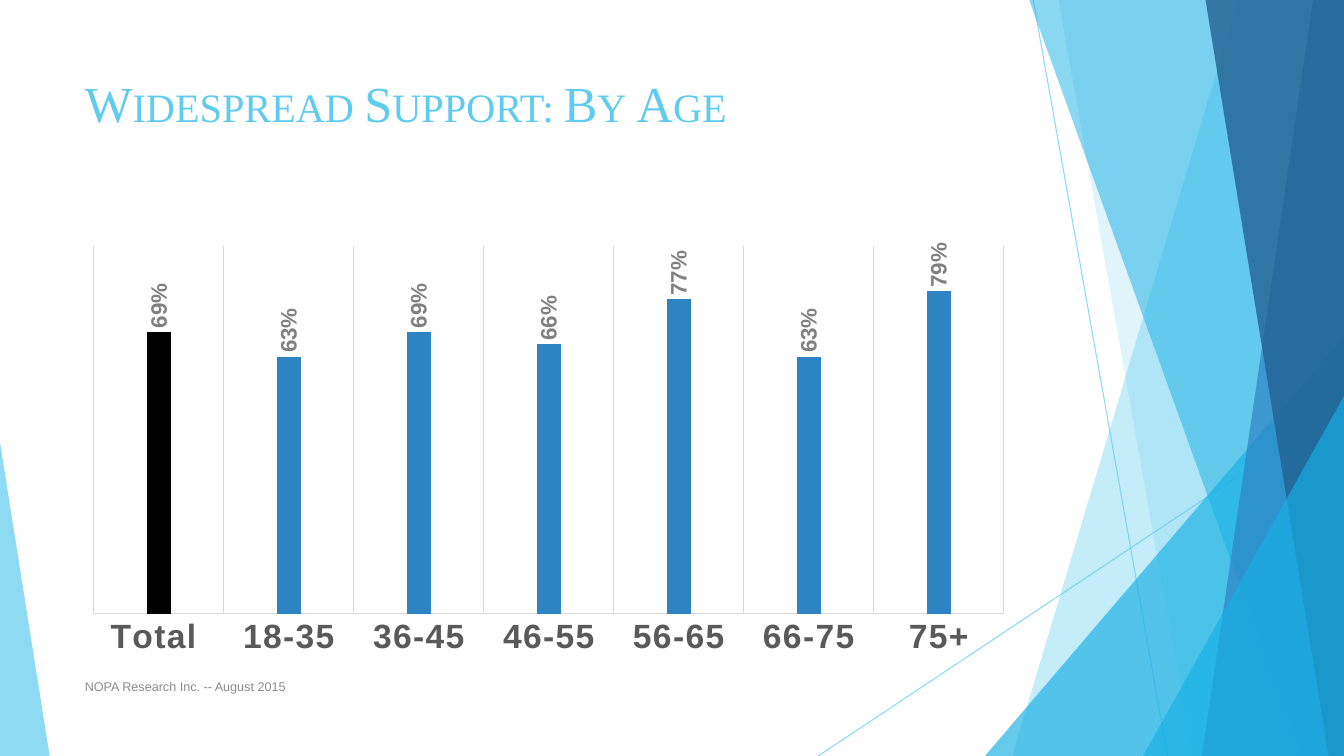
"""Build the slide on support by age: a column chart beside faceted blue panes."""
from lxml import etree
from pptx import Presentation
from pptx.chart.data import CategoryChartData
from pptx.dml.color import RGBColor
from pptx.enum import chart as charts, shapes, text
from pptx.oxml import parse_xml
from pptx.oxml.ns import nsdecls, qn
from pptx.util import Pt

SKY = RGBColor(0x5F, 0xCB, 0xEF)
CYAN = RGBColor(0x17, 0xB0, 0xE4)
BLUE = RGBColor(0x2E, 0x83, 0xC3)
NAVY = RGBColor(0x22, 0x62, 0x92)
BLACK = RGBColor(0, 0, 0)
DARK_GREY = RGBColor(0x59, 0x59, 0x59)
MID_GREY = RGBColor(0x80, 0x80, 0x80)
SOURCE_GREY = RGBColor(0x8C, 0x8C, 0x8C)
PALE_GREY = RGBColor(0xD9, 0xD9, 0xD9)
WIDTH, HEIGHT = 960, 540


def tint(shape, paint, colour, opacity):
    paint.solid()
    paint.fore_color.rgb = colour
    tone = shape._element.spPr.find(".//" + qn("a:srgbClr"))
    etree.SubElement(tone, qn("a:alpha")).set("val", str(opacity * 1000))


def set_font(font, size, colour, name="Arial", bold=False):
    font.size, font.name, font.bold = Pt(size), name, bold
    font.color.rgb = colour


deck = Presentation()
deck.slide_width, deck.slide_height = Pt(WIDTH), Pt(HEIGHT)
slide = deck.slides.add_slide(deck.slide_layouts[5])

for start_x, start_y, end_x in [(738, 0, 834), (WIDTH, 290, 584.5)]:
    ray = slide.shapes.add_connector(
        shapes.MSO_CONNECTOR.STRAIGHT, Pt(start_x), Pt(start_y), Pt(end_x), Pt(HEIGHT))
    ray.line.width = Pt(0.75)
    tint(ray, ray.line.fill, SKY, 70)
    etree.SubElement(ray._element.spPr, qn("a:effectLst"))

panes = [
    ("band", 884.5, 723, SKY, 36),
    ("band", 756, 852, SKY, 20),
    ("wedge", 703.5, 240, CYAN, 66),
    ("band", 735, 929.5, CYAN, 50),
    ("band", 938, 858.5, BLUE, 70),
    ("band", 861, 949, NAVY, 80),
    ("wedge", 816.5, 283, CYAN, 66),
    ("corner", 35.5, 316, SKY, 70),
]
for kind, first, second, colour, opacity in panes:
    if kind == "band":
        outline = slide.shapes.build_freeform(Pt(first), Pt(-0.5))
        outline.add_line_segments(
            [(Pt(WIDTH), Pt(-0.5)), (Pt(WIDTH), Pt(HEIGHT)), (Pt(second), Pt(HEIGHT))])
        pane = outline.convert_to_shape()
    else:
        left, right = (first, WIDTH) if kind == "wedge" else (0, first)
        pane = slide.shapes.add_shape(
            shapes.MSO_SHAPE.ISOSCELES_TRIANGLE,
            Pt(left), Pt(second), Pt(right - left), Pt(HEIGHT - second))
        pane.adjustments[0] = 1 if kind == "wedge" else 0
    tint(pane, pane.fill, colour, opacity)
    pane.line.fill.background()
    pane.shadow.inherit = False

heading = slide.shapes.title
heading.left, heading.top, heading.width, heading.height = Pt(53.5), Pt(48), Pt(677), Pt(101.5)
heading.text_frame.text = "Widespread Support: By Age"
heading.text_frame.vertical_anchor = text.MSO_ANCHOR.TOP
heading.text_frame.auto_size = text.MSO_AUTO_SIZE.NONE
heading_line = heading.text_frame.paragraphs[0]
heading_line.alignment = text.PP_ALIGN.LEFT
set_font(heading_line.font, 36, SKY, "Times New Roman")
heading_line.runs[0].font._element.set("cap", "small")

support = CategoryChartData(number_format="0%")
support.categories = ["Total ", "18-35", "36-45", "46-55", "56-65", "66-75", "75+"]
support.add_series("Series 1", [0.69, 0.63, 0.69, 0.66, 0.77, 0.63, 0.79])
chart = slide.shapes.add_chart(
    charts.XL_CHART_TYPE.COLUMN_CLUSTERED,
    Pt(53.5), Pt(170), Pt(677), Pt(305), support).chart
chart.has_legend = chart.has_title = False
set_font(chart.font, 10, BLACK)

ages = chart.category_axis
ages.major_tick_mark = ages.minor_tick_mark = charts.XL_TICK_MARK.NONE
ages.has_major_gridlines = True
for rule in (ages.format.line, ages.major_gridlines.format.line):
    rule.color.rgb, rule.width = PALE_GREY, Pt(0.75)
set_font(ages.tick_labels.font, 24, DARK_GREY, bold=True)
ages.tick_labels.font._element.set("spc", "100")

share = chart.value_axis
share.minimum_scale, share.maximum_scale = 0, 0.9
share.has_major_gridlines = share.visible = False

columns = chart.plots[0]
columns.gap_width, columns.overlap, columns.vary_by_categories = 444, -90, False
bars = columns.series[0]
bars.format.fill.solid()
bars.format.fill.fore_color.rgb = BLUE
total = bars.points[0].format.fill
total.solid()
total.fore_color.rgb = BLACK

labels = bars.data_labels
labels.show_value = True
labels.number_format, labels.number_format_is_linked = "0%", False
labels.position = charts.XL_LABEL_POSITION.OUTSIDE_END
set_font(labels.font, 16, MID_GREY, bold=True)
turn = labels._element.find(".//" + qn("a:bodyPr"))
turn.set("rot", "-5400000")
turn.set("vert", "horz")

plot_area = chart._chartSpace.chart.plotArea
for automatic in plot_area.findall(qn("c:layout")):
    plot_area.remove(automatic)
plot_area.insert(0, parse_xml(
    f'<c:layout {nsdecls("c")}><c:manualLayout><c:layoutTarget val="inner"/>'
    '<c:xMode val="edge"/><c:yMode val="edge"/><c:x val="0.02"/><c:y val="0.02"/>'
    '<c:w val="0.96"/><c:h val="0.86"/></c:manualLayout></c:layout>'))

source = slide.shapes.add_textbox(Pt(53.5), Pt(476), Pt(496), Pt(29)).text_frame
source.word_wrap = True
source.vertical_anchor = text.MSO_ANCHOR.MIDDLE
source.text = "ΝΟΡΑ Research Inc. -- August 2015"
set_font(source.paragraphs[0].font, 9, SOURCE_GREY)

deck.save("out.pptx")
